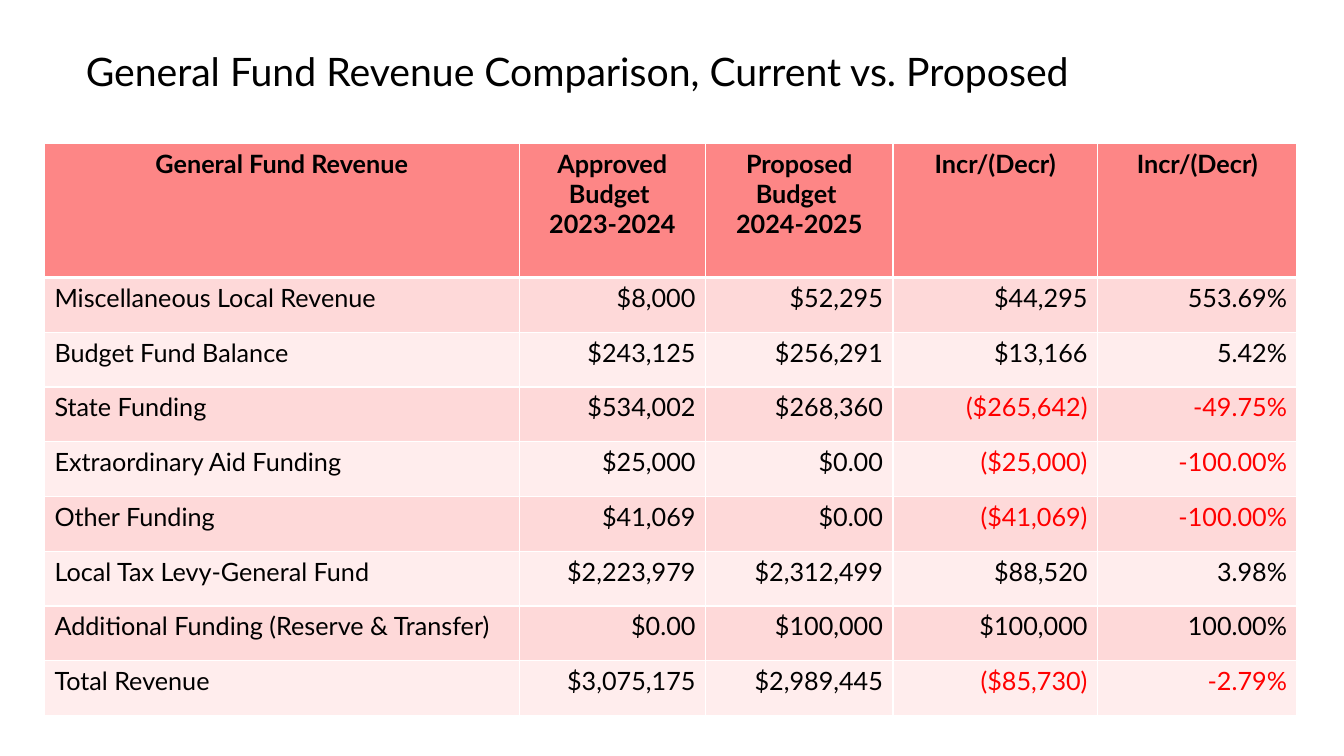
import pptx
import pptx.dml.color
import pptx.enum.text
import pptx.oxml
import pptx.oxml.ns
import pptx.util
from pptx.util import Cm

RGBColor = pptx.dml.color.RGBColor
Align = pptx.enum.text.PP_ALIGN

BLACK = RGBColor(0x00, 0x00, 0x00)
WHITE = RGBColor(0xFF, 0xFF, 0xFF)
RED = RGBColor(0xFF, 0x00, 0x00)
HEADER_FILL = RGBColor(0xFD, 0x86, 0x86)
BAND_FILLS = (RGBColor(0xFE, 0xD9, 0xD9), RGBColor(0xFF, 0xED, 0xED))

FONT = "Lato"
COLUMN_SHARES = (4.71, 1.85, 1.86, 2.03, 1.98)
HEADER_HEIGHT = Cm(3.38)
HEADINGS = ("General Fund Revenue", "Approved Budget \n2023-2024",
            "Proposed Budget \n2024-2025", "Incr/(Decr)", "Incr/(Decr)")
REVENUES = (
    ("Miscellaneous Local Revenue", "$8,000", "$52,295", "$44,295", "553.69%"),
    ("Budget Fund Balance", "$243,125", "$256,291", "$13,166", "5.42%"),
    ("State Funding", "$534,002", "$268,360", "($265,642)", "-49.75%"),
    ("Extraordinary Aid Funding", "$25,000", "$0.00", "($25,000)", "-100.00%"),
    ("Other Funding", "$41,069", "$0.00", "($41,069)", "-100.00%"),
    ("Local Tax Levy-General Fund", "$2,223,979", "$2,312,499", "$88,520", "3.98%"),
    ("Additional Funding (Reserve & Transfer)", "$0.00", "$100,000", "$100,000",
     "100.00%"),
    ("Total Revenue", "$3,075,175", "$2,989,445", "($85,730)", "-2.79%"),
)


def style_paragraph(para, size, color, align, bold=False):
    para.alignment = align
    para.font.name = FONT
    para.font.size = pptx.util.Pt(size)
    para.font.bold = bold
    para.font.color.rgb = color


def set_borders(cell, top, bottom):
    """Draw white borders; top and bottom widths are in points."""
    properties = cell._tc.get_or_add_tcPr()
    widths = {"lnL": 1, "lnR": 1, "lnT": top, "lnB": bottom}
    for position, (tag, width) in enumerate(widths.items()):
        properties.insert(position, pptx.oxml.parse_xml(
            f'<a:{tag} {pptx.oxml.ns.nsdecls("a")} w="{pptx.util.Pt(width)}">'
            f'<a:solidFill><a:srgbClr val="{WHITE}"/></a:solidFill></a:{tag}>'))


def fill_cell(cell, text, fill, color, align, bold=False):
    cell.fill.solid()
    cell.fill.fore_color.rgb = fill
    cell.text = text
    for para in cell.text_frame.paragraphs:
        style_paragraph(para, 18, color, align, bold)


def add_title(page, text, left, top, width, height):
    title = page.shapes.title
    title.left, title.top, title.width, title.height = left, top, width, height
    frame = title.text_frame
    frame.text = text
    frame.word_wrap = True
    frame.auto_size = pptx.enum.text.MSO_AUTO_SIZE.NONE
    frame.vertical_anchor = pptx.enum.text.MSO_ANCHOR.TOP
    style_paragraph(frame.paragraphs[0], 28, BLACK, Align.LEFT)


def add_revenue_table(page, left, top, width, height):
    table = page.shapes.add_table(len(REVENUES) + 1, len(HEADINGS),
                                  left, top, width, height).table
    for column, share in zip(table.columns, COLUMN_SHARES):
        column.width = int(width * share / sum(COLUMN_SHARES))
    for row in table.rows:
        row.height = int((height - HEADER_HEIGHT) / len(REVENUES))
    table.rows[0].height = HEADER_HEIGHT

    # Header row, with a heavier rule below it
    for index, heading in enumerate(HEADINGS):
        cell = table.cell(0, index)
        fill_cell(cell, heading, HEADER_FILL, BLACK, Align.CENTER, bold=True)
        set_borders(cell, top=1, bottom=3)

    # Banded revenue rows, decreases in red
    for number, revenue in enumerate(REVENUES, start=1):
        for index, text in enumerate(revenue):
            cell = table.cell(number, index)
            fill_cell(cell, text, BAND_FILLS[(number - 1) % 2],
                      RED if text.startswith(("(", "-")) else BLACK,
                      Align.RIGHT if index else Align.LEFT)
            set_borders(cell, top=3 if number == 1 else 1, bottom=1)


def main():
    deck = pptx.Presentation()
    deck.slide_width, deck.slide_height = Cm(33.87), Cm(19.05)
    page = deck.slides.add_slide(deck.slide_layouts.get_by_name("Title Only"))
    add_title(page, "General Fund Revenue Comparison, Current vs. Proposed",
              Cm(1.91), Cm(1.07), Cm(29.31), Cm(1.45))
    add_revenue_table(page, Cm(1.12), Cm(3.61), Cm(31.57), Cm(14.42))
    deck.save("out.pptx")


if __name__ == "__main__":
    main()
